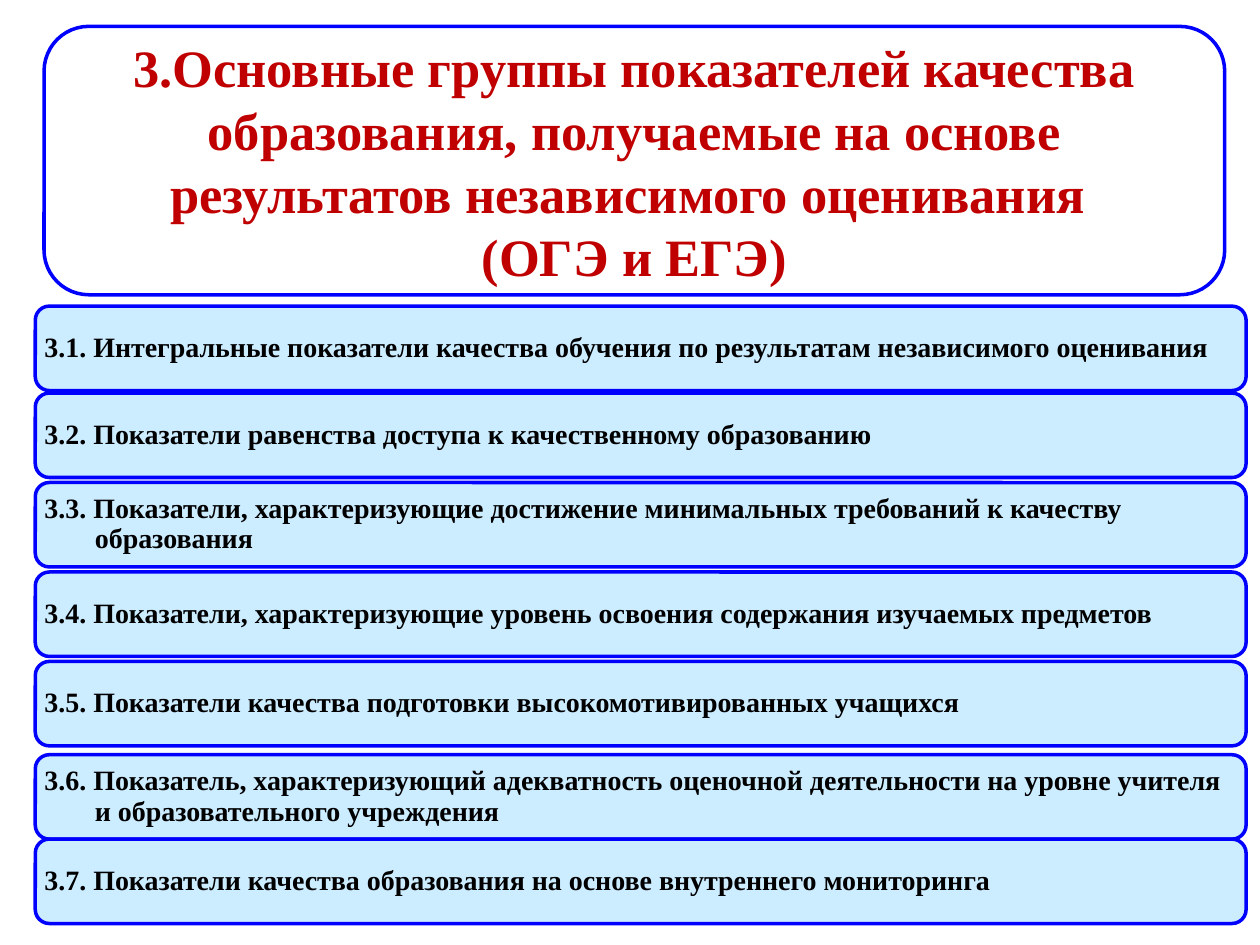
from pptx import Presentation
from pptx.dml.color import RGBColor
from pptx.enum.shapes import MSO_SHAPE as SHAPE
from pptx.enum.text import MSO_ANCHOR as ANCHOR, MSO_AUTO_SIZE as AUTO, PP_ALIGN as ALIGN
from pptx.util import Inches, Pt

COLORS = {"frame": "0000FF", "card": "CCECFF", "title": "C00000", "text": "000000"}
TITLE_BOX = (0.35, 0.21, 9.37, 2.13)
TITLE = (
    "3.Основные группы показателей качества образования, получаемые на основе "
    "результатов независимого оценивания ",
    "(ОГЭ и ЕГЭ)",
)
CARD_LEFT, CARD_WIDTH, CARD_HEIGHT = 0.28, 9.61, 0.67
# Top of each card, its text and its hanging indent
CARDS = [
    (2.43, "3.1. Интегральные показатели качества обучения по результатам независимого оценивания", 0),
    (3.12, "3.2. Показатели равенства доступа к качественному образованию", 0),
    (3.83, "3.3. Показатели, характеризующие достижение минимальных требований к качеству образования", 0.4),
    (4.54, "3.4. Показатели, характеризующие уровень освоения содержания изучаемых предметов", 0),
    (5.25, "3.5. Показатели качества подготовки высокомотивированных учащихся", 0),
    (5.99, "3.6. Показатель, характеризующий адекватность оценочной деятельности "
           "на уровне учителя и образовательного учреждения", 0.4),
    (6.66, "3.7. Показатели качества образования на основе внутреннего мониторинга", 0),
]
TITLE_FONT = {"name": "Times New Roman", "size": Pt(30), "bold": True}
CARD_FONT = {**TITLE_FONT, "size": Pt(16)}


def rgb(key):
    return RGBColor.from_string(COLORS[key])


def apply(obj, formats):
    for name, value in formats.items():
        setattr(obj, name, value)


def add_run(p, text, font, color):
    r = p.add_run()
    r.text = text
    apply(r.font, font)
    r.font.color.rgb = rgb(color)


def add_frame(slide, box, fill=None):
    sp = slide.shapes.add_shape(SHAPE.ROUNDED_RECTANGLE, *map(Inches, box))
    sp.shadow.inherit = False
    if fill:
        sp.fill.solid()
        sp.fill.fore_color.rgb = rgb(fill)
    else:
        sp.fill.background()
    sp.line.color.rgb = rgb("frame")
    sp.line.width = Pt(2)
    return sp


def set_title(slide):
    sp = slide.shapes.title
    apply(sp, dict(zip(("left", "top", "width", "height"), map(Inches, TITLE_BOX))))
    tf = sp.text_frame
    apply(tf, {"word_wrap": True, "auto_size": AUTO.NONE, "vertical_anchor": ANCHOR.MIDDLE,
               "margin_left": Inches(0.2), "margin_right": Inches(0.2)})
    for i, text in enumerate(TITLE):
        p = tf.add_paragraph() if i else tf.paragraphs[0]
        p.alignment = ALIGN.CENTER
        add_run(p, text, TITLE_FONT, "title")


def add_card(slide, top, text, indent):
    sp = add_frame(slide, (CARD_LEFT, top, CARD_WIDTH, CARD_HEIGHT), "card")
    tf = sp.text_frame
    apply(tf, {"word_wrap": True, "vertical_anchor": ANCHOR.MIDDLE})
    for side in ("left", "top", "right", "bottom"):
        setattr(tf, f"margin_{side}", Inches(0.04))
    p = tf.paragraphs[0]
    apply(p, {"alignment": ALIGN.LEFT, "line_spacing": 0.9})
    if indent:
        # Hanging indent for entries that wrap
        pPr = p._p.get_or_add_pPr()
        pPr.set("marL", str(Inches(indent)))
        pPr.set("indent", str(-Inches(indent)))
    add_run(p, text, CARD_FONT, "text")


def main():
    prs = Presentation()
    prs.slide_width, prs.slide_height = Inches(10), Inches(7.5)
    slide = prs.slides.add_slide(prs.slide_layouts[5])

    # Heading in a rounded frame
    set_title(slide)
    add_frame(slide, TITLE_BOX)

    # Groups of indicators
    for top, text, indent in CARDS:
        add_card(slide, top, text, indent)

    prs.save("out.pptx")


if __name__ == "__main__":
    main()
